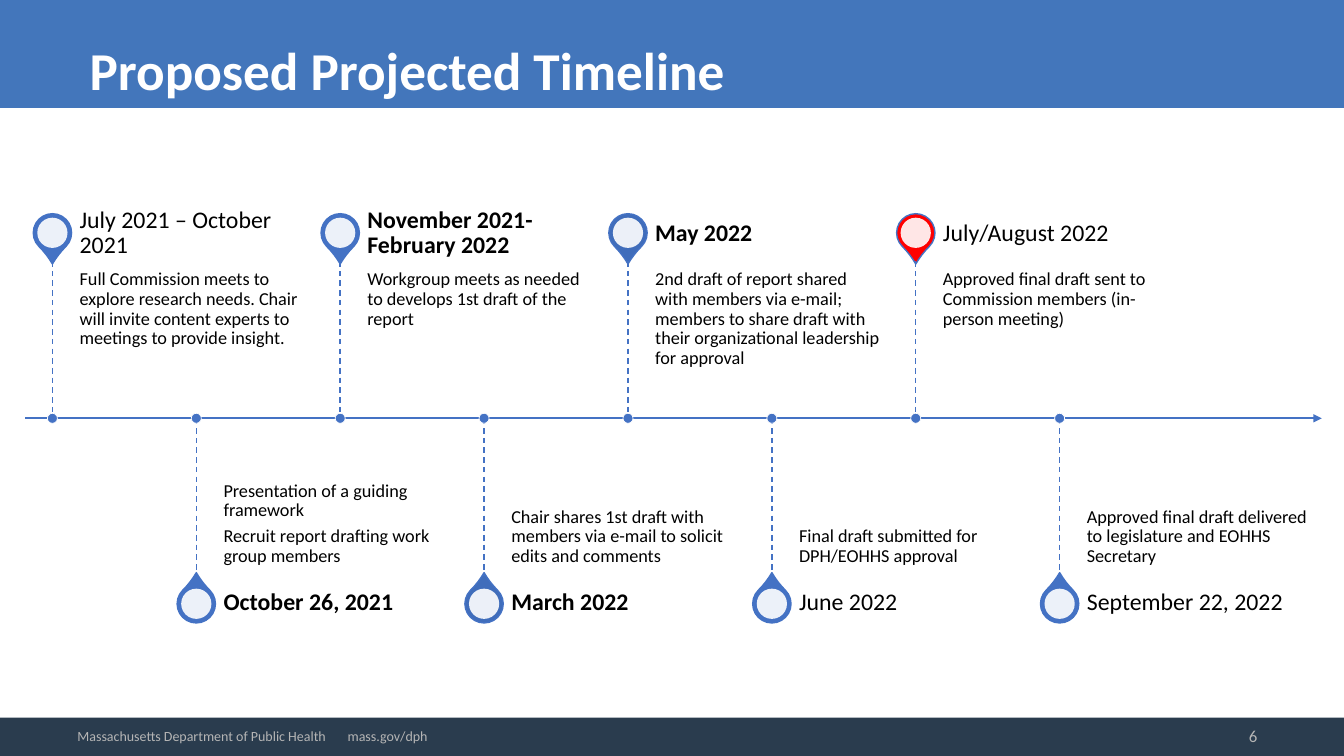
from dataclasses import dataclass

from lxml import etree
from pptx import Presentation
from pptx import util as u
from pptx.dml.color import RGBColor
from pptx.enum import dml, shapes, text
from pptx.oxml.ns import qn

WIDE, HIGH = 13.33, 7.5
COL = 9.99 / 7  # one step along the axis
FIRST, AXIS = 0.52, 4.15
STEM, HEAD, PIN = 1.56, 0.55, 1.84
BLUE, DEEP, RED, WHITE = "4472C4", "406DBB", "FF0000", "FFFFFF"
BLACK, GREY = "000000", "B5B5B5"
SHAPE, ANCHOR = shapes.MSO_SHAPE, text.MSO_ANCHOR


@dataclass
class Event:
    date: str
    notes: list[str]
    bold: bool = False
    fill: str = BLUE


@dataclass
class Style:
    size: float
    color: str = BLACK
    bold: bool = False
    anchor: ANCHOR = ANCHOR.MIDDLE
    inset: tuple[float, float, float, float] = (0.1, 0.05, 0.1, 0.05)
    lead: float = 1.0
    after: float = 0
    align: text.PP_ALIGN = text.PP_ALIGN.LEFT


# Events alternate above and below the axis.
EVENTS = [
    Event("July 2021 – October 2021",
          ["Full Commission meets to explore research needs. Chair will "
           "invite content experts to meetings to provide insight."]),
    Event("October 26, 2021",
          ["Presentation of a guiding framework",
           "Recruit report drafting work group members"], True),
    Event("November 2021- February 2022",
          ["Workgroup meets as needed to develops 1st draft of the report"],
          True),
    Event("March 2022",
          ["Chair shares 1st draft with members via e-mail to "
           "solicit edits and comments"], True, DEEP),
    Event("May 2022",
          ["2nd draft of report shared with members via e-mail; members to "
           "share draft with their organizational leadership for approval"],
          True, DEEP),
    Event("June 2022", ["Final draft submitted for DPH/EOHHS approval"]),
    Event("July/August 2022",
          ["Approved final draft sent to Commission members "
           "(in-person meeting)"], fill=RED),
    Event("September 22, 2022",
          ["Approved final draft delivered to legislature and EOHHS "
           "Secretary"]),
]


def paint(fmt, color: str) -> None:
    fmt.solid()
    fmt.fore_color.rgb = RGBColor.from_string(color)


def shape(slide, kind: SHAPE, box: tuple, fill: str,
          line: str = "", weight: float = 1):
    item = slide.shapes.add_shape(kind, *map(u.Inches, box))
    item.shadow.inherit = False
    paint(item.fill, fill)
    if line:
        paint(item.line.fill, line)
        item.line.width = u.Pt(weight)
    else:
        item.line.fill.background()
    return item


def disc(slide, x: float, y: float, size: float, fill: str,
         kind: SHAPE = SHAPE.OVAL, line: str = "", weight: float = 1):
    """Add a shape of equal sides centred on x, y."""
    box = (x - size / 2, y - size / 2, size, size)
    return shape(slide, kind, box, fill, line, weight)


def rule(slide, start: tuple, end: tuple, weight: float):
    line = slide.shapes.add_connector(
        shapes.MSO_CONNECTOR.STRAIGHT, *map(u.Inches, start + end))
    paint(line.line.fill, BLUE)
    line.line.width = u.Pt(weight)
    etree.SubElement(line._element.spPr, qn("a:effectLst"))
    return line


def label(slide, box: tuple, lines: list[str], style: Style) -> None:
    frame = slide.shapes.add_textbox(*map(u.Inches, box)).text_frame
    frame.word_wrap = True
    frame.vertical_anchor = style.anchor
    (frame.margin_left, frame.margin_top, frame.margin_right,
     frame.margin_bottom) = map(u.Inches, style.inset)
    for i, words in enumerate(lines):
        para = frame.add_paragraph() if i else frame.paragraphs[0]
        para.alignment = style.align
        para.line_spacing = style.lead
        para.space_after = u.Pt(style.after)
        run = para.add_run()
        run.text = words
        run.font.name = "Calibri"
        run.font.size = u.Pt(style.size)
        run.font.bold = style.bold
        run.font.color.rgb = RGBColor.from_string(style.color)


def axis(slide) -> None:
    line = rule(slide, (0.25, AXIS), (13.11, AXIS), 1.5)
    ln = line.line._get_or_add_ln()
    etree.SubElement(ln, qn("a:tailEnd"), type="triangle")


def event(slide, step: int, item: Event) -> None:
    """Draw the pin, texts, stem and dot of one event."""
    x, above = FIRST + step * COL, step % 2 == 0
    side = -1 if above else 1
    tip, mid = AXIS + side * STEM, AXIS + side * PIN

    pin = disc(slide, x, mid, 0.38, item.fill, SHAPE.TEAR, BLUE)
    pin.adjustments[0] = 1.15
    pin.rotation = 135 if above else 315
    eye = disc(slide, x, mid, 0.3, WHITE)
    tint = eye.fill._xPr.find(qn("a:solidFill"))[0]
    etree.SubElement(tint, qn("a:alpha"), val="90000")

    left, width = x + 0.27, 2.33
    label(slide, (left, min(AXIS, tip), width, STEM), item.notes,
          Style(13, anchor=ANCHOR.TOP if above else ANCHOR.BOTTOM,
                inset=(0, 0.09, 0.09, 0.14) if above else (0, 0.14, 0, 0.09),
                lead=0.9, after=4.55))
    label(slide, (left, tip - HEAD if above else tip, width, HEAD),
          [item.date],
          Style(17, bold=item.bold, inset=(0, 0, 0.12, 0), lead=0.9))

    stem = rule(slide, (x, min(AXIS, tip)), (x, max(AXIS, tip)), 1)
    stem.line.dash_style = dml.MSO_LINE.DASH
    disc(slide, x, AXIS, 0.1, BLUE, line=WHITE, weight=0.5)


def main() -> None:
    deck = Presentation()
    deck.slide_width, deck.slide_height = u.Inches(WIDE), u.Inches(HIGH)
    slide = deck.slides.add_slide(deck.slide_layouts[6])

    foot = 0.38
    shape(slide, SHAPE.RECTANGLE, (0, HIGH - foot, WIDE, foot), "2A3C4E")
    shape(slide, SHAPE.RECTANGLE, (0, 0, WIDE, 1.07), "4376BB")
    label(slide, (0.79, 0.32, 7.75, 0.74), ["Proposed Projected Timeline"],
          Style(38, WHITE, True))

    axis(slide)
    for step, item in enumerate(EVENTS):
        event(slide, step, item)

    small = Style(10, GREY)
    label(slide, (0.67, 7.12, 2.7, 0.37),
          ["Massachusetts Department of Public Health"], small)
    label(slide, (3.35, 7.12, 1.49, 0.37), ["mass.gov/dph"], small)
    label(slide, (9.58, 7.1, 2.99, 0.4), ["6"],
          Style(12, GREY, align=text.PP_ALIGN.RIGHT))
    deck.save("out.pptx")


if __name__ == "__main__":
    main()
